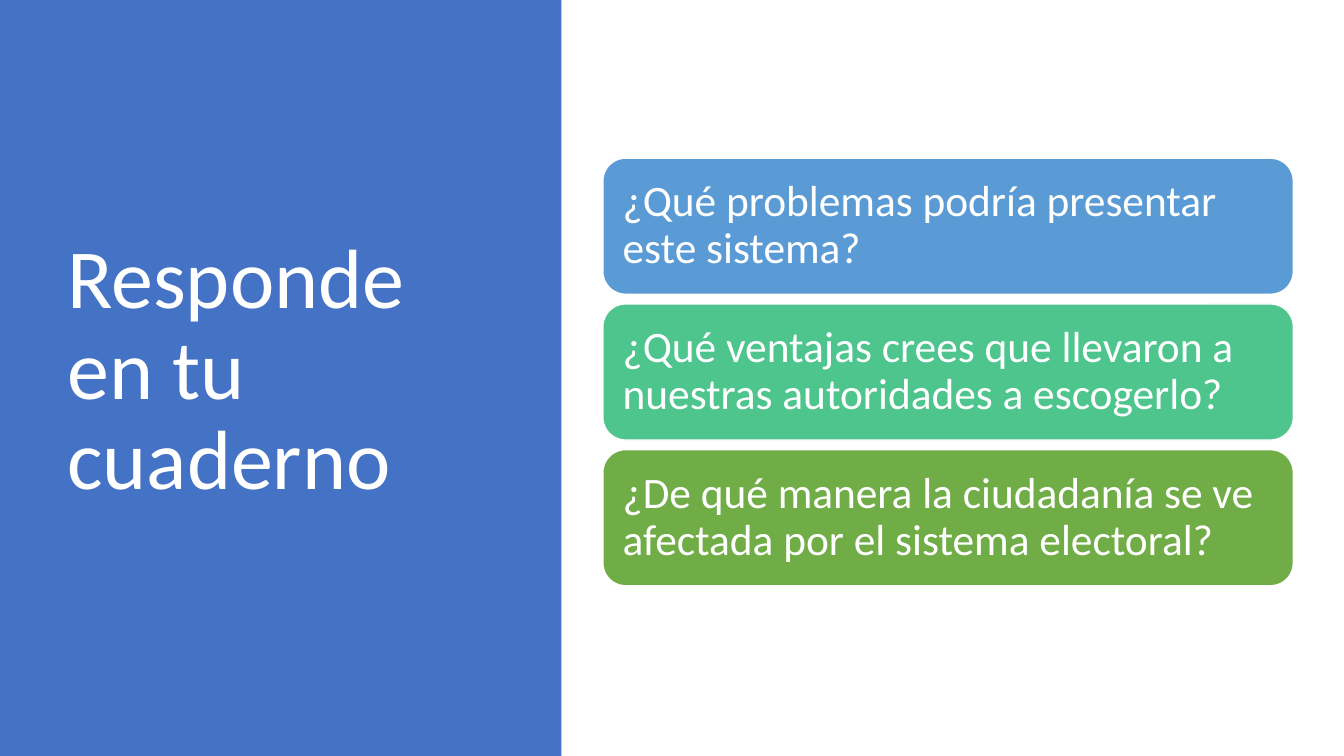
from dataclasses import dataclass

import pptx
import pptx.dml.color
import pptx.enum.shapes
import pptx.enum.text
import pptx.util

Pt = pptx.util.Pt
RGBColor = pptx.dml.color.RGBColor
ShapeType = pptx.enum.shapes.MSO_SHAPE


@dataclass(frozen=True)
class Theme:
    font: str = "Calibri"
    title_size: float = 60
    question_size: float = 31
    text: str = "FFFFFF"
    panel: str = "4472C4"
    card_border: str = "FFFFFF"


THEME = Theme()

QUESTIONS = [
    ("¿Qué problemas podría presentar este sistema?", "5B9BD5"),
    ("¿Qué ventajas crees que llevaron a nuestras autoridades a escogerlo?", "4DC58D"),
    ("¿De qué manera la ciudadanía se ve afectada por el sistema electoral?", "70AD47"),
]
CARD_LEFT, CARD_TOP = 430.6, 113
CARD_WIDTH, CARD_HEIGHT = 493.2, 97.2
CARD_PITCH = 104.1


def set_attributes(target, values):
    for name, value in values.items():
        setattr(target, name, value)


def write_text(shape, text, size, inset_x, inset_y):
    """Fill a shape with one left-aligned, vertically centred paragraph."""
    frame = shape.text_frame
    set_attributes(frame, {
        "word_wrap": True,
        "vertical_anchor": pptx.enum.text.MSO_ANCHOR.MIDDLE,
        "margin_left": Pt(inset_x), "margin_right": Pt(inset_x),
        "margin_top": Pt(inset_y), "margin_bottom": Pt(inset_y),
    })
    paragraph = frame.paragraphs[0]
    set_attributes(paragraph, {
        "text": text,
        "alignment": pptx.enum.text.PP_ALIGN.LEFT,
        "line_spacing": 0.9,
    })
    font = paragraph.runs[0].font
    set_attributes(font, {"name": THEME.font, "size": Pt(size)})
    font.color.rgb = RGBColor.from_string(THEME.text)


def add_filled_shape(slide, shape_type, box, color):
    shape = slide.shapes.add_shape(shape_type, *map(Pt, box))
    shape.shadow.inherit = False
    shape.fill.solid()
    shape.fill.fore_color.rgb = RGBColor.from_string(color)
    shape.line.fill.background()
    return shape


def add_title(slide, text):
    title = slide.shapes.add_textbox(Pt(41), Pt(49), Pt(299.5), Pt(433.4))
    write_text(title, text, THEME.title_size, 7.2, 3.6)


def add_question_card(slide, index, question, color):
    box = (CARD_LEFT, CARD_TOP + index * CARD_PITCH, CARD_WIDTH, CARD_HEIGHT)
    card = add_filled_shape(slide, ShapeType.ROUNDED_RECTANGLE, box, color)
    card.line.color.rgb = RGBColor.from_string(THEME.card_border)
    card.line.width = Pt(1)
    write_text(card, question, THEME.question_size, 9.4, 9.4)


def main():
    presentation = pptx.Presentation()
    set_attributes(presentation, {"slide_width": Pt(960), "slide_height": Pt(540)})
    slide = presentation.slides.add_slide(presentation.slide_layouts[6])
    add_filled_shape(slide, ShapeType.RECTANGLE, (0, 0, 401, 540), THEME.panel)
    add_title(slide, "Responde en tu cuaderno")
    for index, (question, color) in enumerate(QUESTIONS):
        add_question_card(slide, index, question, color)
    presentation.save("out.pptx")


if __name__ == "__main__":
    main()
